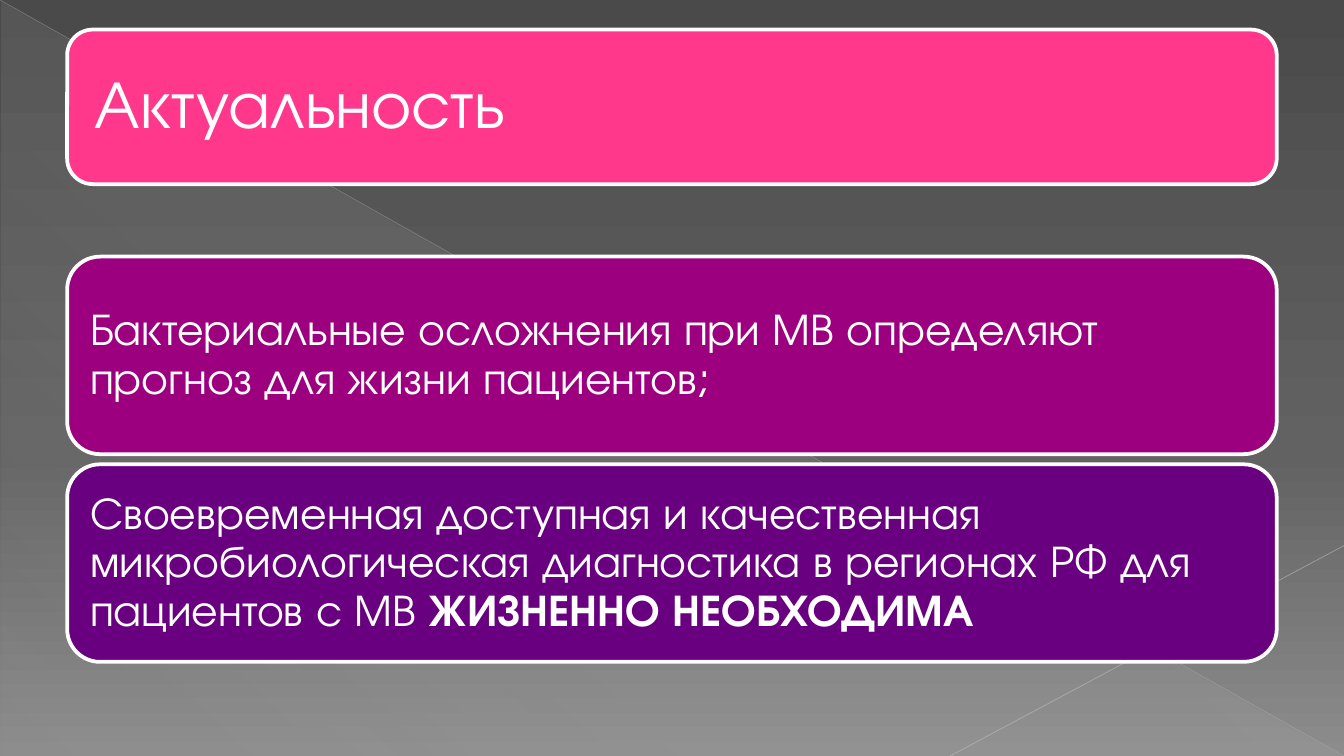
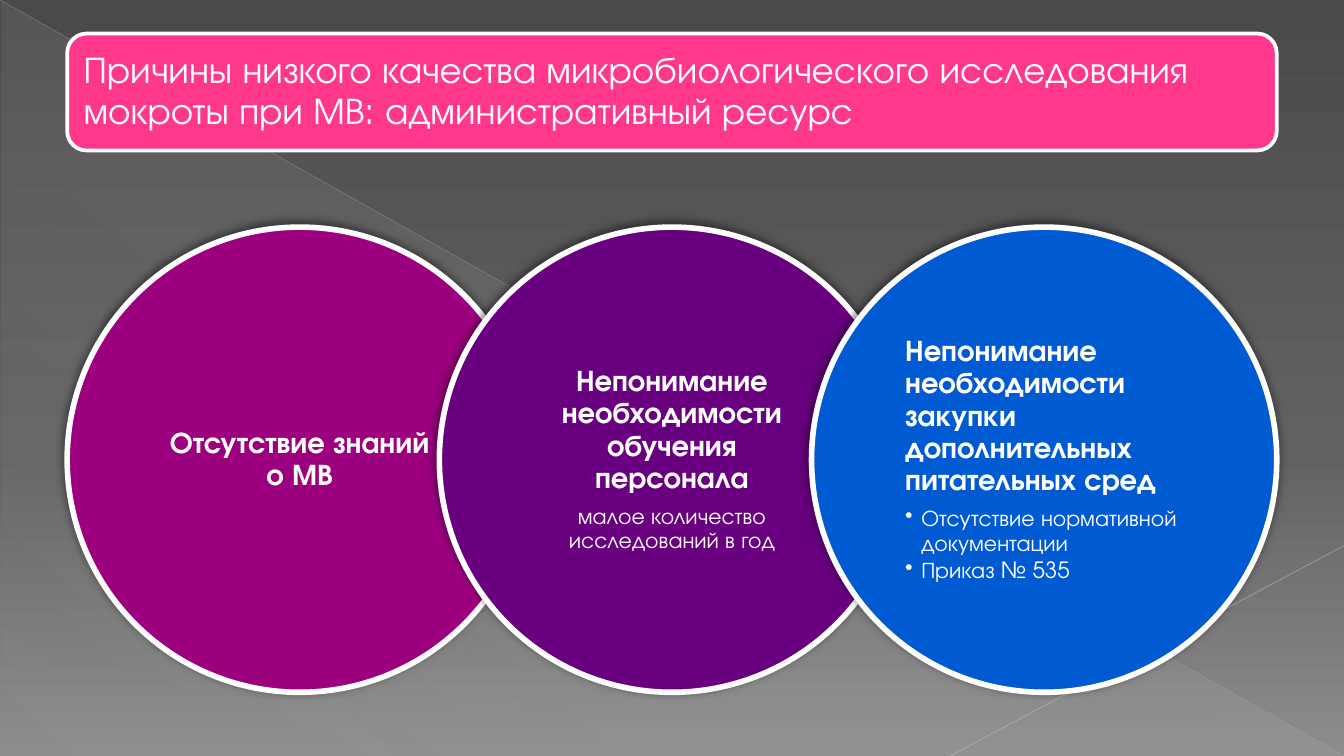
"""Build two slides on microbiological diagnostics in patients with МВ."""
from lxml.etree import SubElement
from pptx import Presentation
from pptx.dml.color import RGBColor
from pptx.enum.shapes import MSO_CONNECTOR as Link, MSO_SHAPE as Shape
from pptx.enum.text import MSO_ANCHOR as Anchor, PP_ALIGN as Align
from pptx.oxml.ns import qn
from pptx.util import Inches, Pt

COLORS = {
    "white": "FFFFFF", "title": "FF388C", "magenta": "9C007F",
    "purple": "68007F", "blue": "005BD3", "facet": "D2D2D2",
    "diagonal": "BFBFBF", "corner": "C6C6C6", "shadow": "000000",
    "night": "4A4A4A", "dusk": "626262", "fog": "8C8C8C",
}
FONT = "TeX Gyre Adventor"
WIDTH, HEIGHT = Inches(10), Inches(5.625)
UNIT = WIDTH / 100
MARGIN, SPAN = 5, 90
ROUND_INSET, CIRCLE_INSET = 0.0488, 0.1464


def cells(*counts):
    """Turn counts of grid cells into lengths."""
    return [round(count * UNIT) for count in counts]


def rgb(name):
    """Look up a named colour."""
    return RGBColor.from_string(COLORS[name])


def apply(target, **values):
    """Set several attributes of one object."""
    for name, value in values.items():
        setattr(target, name, value)


def add_color(parent, name, alpha=100):
    """Append a colour with its opacity in percent."""
    color = SubElement(parent, qn("a:srgbClr"), val=COLORS[name])
    if alpha < 100:
        SubElement(color, qn("a:alpha"), val=str(alpha * 1000))


def set_gradient(holder, stops, angle):
    """Replace the solid fill of a holder with a linear gradient."""
    solid = holder.find(qn("a:solidFill"))
    gradient = SubElement(holder, qn("a:gradFill"), rotWithShape="1")
    holder.replace(solid, gradient)
    stop_list = SubElement(gradient, qn("a:gsLst"))
    for position, name, alpha in stops:
        stop = SubElement(stop_list, qn("a:gs"), pos=str(position * 1000))
        add_color(stop, name, alpha)
    SubElement(gradient, qn("a:lin"), ang=str(angle * 60000), scaled="0")


def add_ray(slide, start, end, color, weight, alpha):
    """Draw a thin translucent line across the backdrop."""
    ray = slide.shapes.add_connector(Link.STRAIGHT, *start, *end)
    apply(ray.line, width=Pt(weight))
    ray.line.color.rgb = rgb(color)
    shade = ray.line._ln.find(".//" + qn("a:srgbClr"))
    SubElement(shade, qn("a:alpha"), val=str(alpha * 1000))
    SubElement(ray._element.spPr, qn("a:effectLst"))


def add_backdrop(slide):
    """Draw the grey backdrop with its facet and rays."""
    slide.background.fill.solid()
    set_gradient(slide.element.find(".//" + qn("p:bgPr")),
                 [(0, "night", 100), (60, "dusk", 100), (100, "fog", 100)], 90)
    facet = add_panel(slide, Shape.RIGHT_TRIANGLE, (0.1, 0.1, 99.8, 56.1), "facet", 0)
    set_gradient(facet._element.spPr,
                 [(0, "facet", 10), (70, "facet", 8), (100, "facet", 1)], 133)
    add_ray(slide, (0, 0), (WIDTH, HEIGHT), "diagonal", 0.39, 35)
    add_ray(slide, cells(100, 40.6), (cells(70.7)[0], HEIGHT), "corner", 0.47, 45)


def add_panel(slide, kind, frame, color, weight):
    """Draw a filled shape, outlined in white if it has a weight."""
    panel = slide.shapes.add_shape(kind, *cells(*frame))
    panel.shadow.inherit = False
    panel.fill.solid()
    panel.fill.fore_color.rgb = rgb(color)
    if weight:
        panel.line.width = Pt(weight)
        panel.line.color.rgb = rgb("white")
    else:
        panel.line.fill.background()
    return panel


def add_paragraph(paragraph, runs, size, align=Align.LEFT, bullet=False):
    """Write (text, bold) runs as one paragraph."""
    apply(paragraph, alignment=align, line_spacing=0.9)
    layout = paragraph._p.get_or_add_pPr()
    after = SubElement(layout, qn("a:spcAft"))
    SubElement(after, qn("a:spcPct"), val="15000" if bullet else "35000")
    if bullet:
        paragraph.level = 1
        indent = Inches(0.12)
        layout.set("marL", str(indent))
        layout.set("indent", str(-indent))
        SubElement(layout, qn("a:buChar"), char="•")
    for text, bold in runs:
        run = paragraph.add_run()
        run.text = text
        apply(run.font, name=FONT, size=Pt(size), bold=bold)
        run.font.color.rgb = rgb("white")


def add_label(slide, frame, inset, paragraphs, pad_x, pad_y):
    """Place text inside a shape's frame, moved in on every side."""
    left, top, width, height = frame
    gap = height * inset
    box = slide.shapes.add_textbox(
        *cells(left + gap, top + gap, width - 2 * gap, height - 2 * gap))
    body = box.text_frame
    apply(body, word_wrap=True, vertical_anchor=Anchor.MIDDLE,
          margin_left=Inches(pad_x), margin_right=Inches(pad_x),
          margin_top=Inches(pad_y), margin_bottom=Inches(pad_y))
    for index, content in enumerate(paragraphs):
        add_paragraph(body.add_paragraph() if index else body.paragraphs[0], **content)


def add_band(slide, top, height, color, runs, size, pad):
    """Draw a rounded band across the slide with its text."""
    frame = (MARGIN, top, SPAN, height)
    add_panel(slide, Shape.ROUNDED_RECTANGLE, frame, color, 2)
    add_label(slide, frame, ROUND_INSET, [{"runs": runs, "size": size}], pad, pad)


def add_circles(slide, top, causes, overlap=0.2):
    """Draw a row of overlapping circles, one for each cause."""
    pitch = 1 - overlap
    diameter = SPAN / (1 + pitch * (len(causes) - 1))
    for index, (color, paragraphs) in enumerate(causes):
        frame = (MARGIN + index * pitch * diameter, top, diameter, diameter)
        circle = add_panel(slide, Shape.OVAL, frame, color, 3)
        effects = circle._element.spPr.find(qn("a:effectLst"))
        shadow = SubElement(effects, qn("a:outerShdw"), blurRad=str(Pt(5)),
                            dist=str(Pt(2)), dir=str(245 * 60000), rotWithShape="0")
        add_color(shadow, "shadow", 50)
        add_label(slide, frame, CIRCLE_INSET, paragraphs, 0.19, 0.02)


def cause(text, align=Align.CENTER):
    """Describe the bold heading of a circle."""
    return {"runs": [(text, True)], "size": 16, "align": align}


def detail(text, **options):
    """Describe a small line below a heading."""
    return {"runs": [(text, False)], "size": 12, **options}


def build_relevance(slide):
    """Fill the slide on relevance."""
    add_band(slide, 2.2, 11.5, "title", [("Актуальность", False)], 36, 0.15)
    statements = [
        ("magenta", [("Бактериальные осложнения при МВ определяют прогноз "
                      "для жизни пациентов;", False)]),
        ("purple", [("Своевременная доступная и качественная микробиологическая "
                     "диагностика в регионах РФ для пациентов с МВ ", False),
                    ("ЖИЗНЕННО НЕОБХОДИМА", True)]),
    ]
    for index, (color, runs) in enumerate(statements):
        add_band(slide, 19.1 + index * 15.45, 14.7, color, runs, 24, 0.1)


def build_causes(slide):
    """Fill the slide on causes of low quality."""
    add_band(slide, 2.5, 8.7, "title",
             [("Причины низкого качества микробиологического исследования "
               "мокроты при МВ: административный ресурс", False)], 20, 0.08)
    add_circles(slide, 16.9, [
        ("magenta", [cause("Отсутствие знаний о МВ")]),
        ("purple", [cause("Непонимание необходимости обучения персонала"),
                    detail("малое количество исследований в год",
                           align=Align.CENTER)]),
        ("blue", [cause("Непонимание необходимости закупки дополнительных "
                        "питательных сред", Align.LEFT),
                  detail("Отсутствие нормативной документации", bullet=True),
                  detail("Приказ № 535", bullet=True)]),
    ])


def main():
    """Build and save the presentation."""
    deck = Presentation()
    apply(deck, slide_width=WIDTH, slide_height=HEIGHT)
    for build in (build_relevance, build_causes):
        slide = deck.slides.add_slide(deck.slide_layouts[6])
        add_backdrop(slide)
        build(slide)
    deck.save("out.pptx")


if __name__ == "__main__":
    main()
